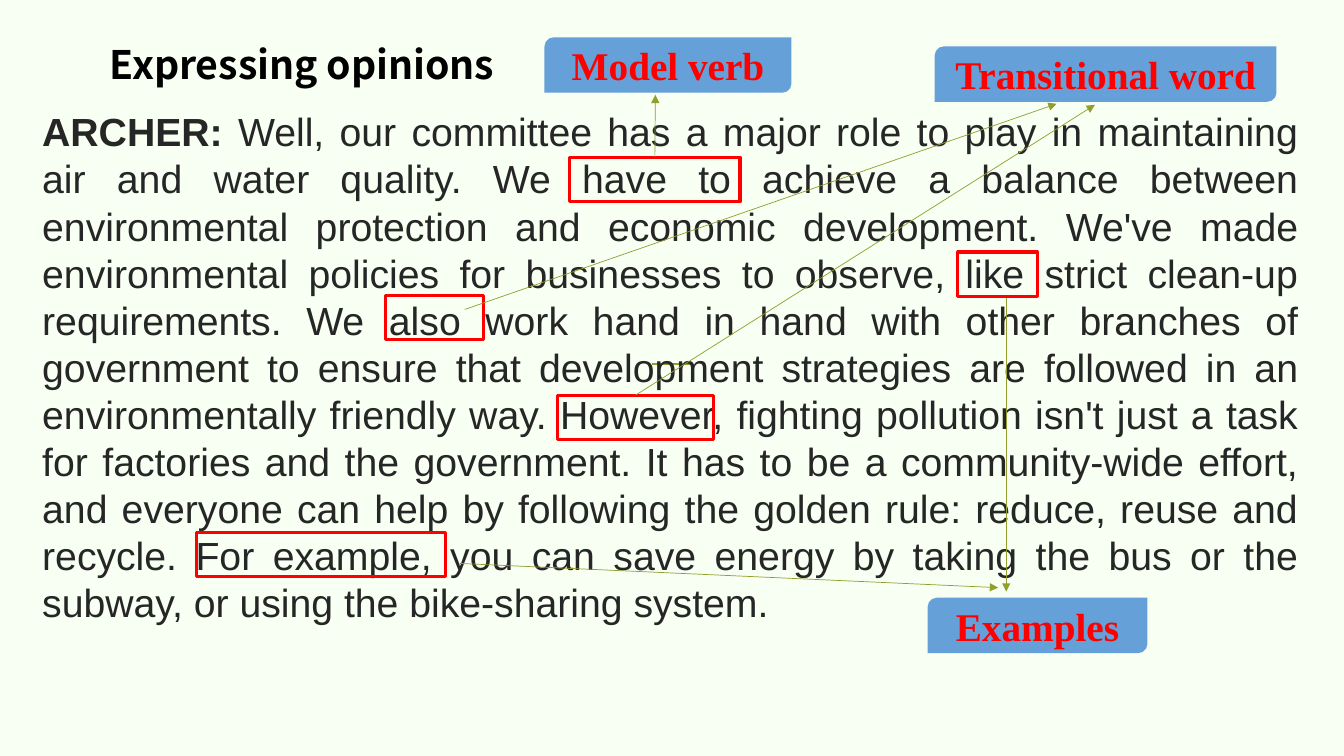
from lxml import etree
from pptx import Presentation
from pptx.dml.color import RGBColor
from pptx.enum.shapes import MSO_CONNECTOR, MSO_SHAPE
from pptx.enum.text import MSO_ANCHOR, PP_ALIGN
from pptx.oxml.ns import qn
from pptx.util import Inches, Pt

STRAIGHT = MSO_CONNECTOR.STRAIGHT
RECTANGLE = MSO_SHAPE.RECTANGLE
LABEL_SHAPE = MSO_SHAPE.ROUND_2_DIAG_RECTANGLE
TOP, MIDDLE = MSO_ANCHOR.TOP, MSO_ANCHOR.MIDDLE
LEFT, CENTER, JUSTIFY = PP_ALIGN.LEFT, PP_ALIGN.CENTER, PP_ALIGN.JUSTIFY
TOP_SITE = 0

BACKGROUND, BLACK, BODY = "F8FFF3", "000000", "262626"
RED, BLUE, OLIVE = "FF0000", "65A1D8", "929E2D"

SPEECH = (
    "Well, our committee has a major role to play in maintaining air and water quality. "
    "We have to achieve a balance between environmental protection and economic development. "
    "We've made environmental policies for businesses to observe, like strict clean-up "
    "requirements. We also work hand in hand with other branches of government to ensure that "
    "development strategies are followed in an environmentally friendly way. However, fighting "
    "pollution isn't just a task for factories and the government. It has to be a "
    "community-wide effort, and everyone can help by following the golden rule: reduce, reuse "
    "and recycle. For example, you can save energy by taking the bus or the subway, or using "
    "the bike-sharing system."
)


def color(value):
    return RGBColor.from_string(value)


def write(shape, runs, font="Arial", size=28, fill=BODY, align=LEFT, anchor=TOP, spacing=None):
    """Fill a shape with one paragraph made of (text, bold) runs."""
    frame = shape.text_frame
    frame.word_wrap = True
    frame.vertical_anchor = anchor
    paragraph = frame.paragraphs[0]
    paragraph.alignment = align
    if spacing:
        paragraph.line_spacing = spacing
    for text, bold in runs:
        run = paragraph.add_run()
        run.text = text
        run.font.name = font
        run.font.size = Pt(size)
        run.font.bold = bold
        run.font.color.rgb = color(fill)


class OpinionSlide:
    def __init__(self, presentation):
        self.slide = presentation.slides.add_slide(presentation.slide_layouts[6])
        self.shapes = self.slide.shapes
        background = self.slide.background.fill
        background.solid()
        background.fore_color.rgb = color(BACKGROUND)

    def text(self, box, runs, **style):
        write(self.shapes.add_textbox(*map(Inches, box)), runs, **style)

    def highlight(self, left, top, width):
        """Frame a phrase in the speech."""
        shape = self.shapes.add_shape(RECTANGLE, *map(Inches, (left, top, width, 0.44)))
        shape.shadow.inherit = False
        shape.fill.background()
        shape.line.color.rgb = color(RED)
        shape.line.width = Pt(2.25)
        return shape

    def label(self, text, left, top, width):
        shape = self.shapes.add_shape(LABEL_SHAPE, *map(Inches, (left, top, width, 0.55)))
        shape.shadow.inherit = False
        shape.fill.solid()
        shape.fill.fore_color.rgb = color(BLUE)
        shape.line.fill.background()
        write(shape, [(text, True)], font="Times New Roman", fill=RED, align=CENTER, anchor=MIDDLE)

    def line(self, start, end, width=0.5, arrow=True, source=None):
        connector = self.shapes.add_connector(STRAIGHT, *map(Inches, start + end))
        if source is not None:
            connector.begin_connect(source, TOP_SITE)
        connector.line.color.rgb = color(OLIVE)
        connector.line.width = Pt(width)
        if arrow:
            outline = connector.line._get_or_add_ln()
            etree.SubElement(outline, qn("a:tailEnd"), type="triangle")
        etree.SubElement(connector._element.spPr, qn("a:effectLst"))


def main():
    presentation = Presentation()
    presentation.slide_width = Inches(13.33)
    presentation.slide_height = Inches(7.5)
    page = OpinionSlide(presentation)

    page.line((6.47, 3.61), (6.85, 3.61), width=1.5, arrow=False)
    page.text((0.99, 0.24, 6.61, 0.79), [("Expressing opinions", True)],
              font="Noto Sans CJK SC", fill=BLACK, anchor=MIDDLE)
    page.text((0.32, 1.02, 12.65, 5.28), [("ARCHER: ", True), (SPEECH, False)],
              align=JUSTIFY, spacing=Pt(33.6))

    have_to = page.highlight(5.65, 1.56, 1.69)
    page.highlight(9.5, 2.5, 0.79)
    page.highlight(3.82, 2.93, 0.98)
    however = page.highlight(5.53, 3.92, 1.55)
    page.highlight(1.95, 5.28, 2.47)

    page.label("Examples", 9.2, 5.93, 2.18)
    page.line((9.98, 2.96), (9.98, 5.87))
    page.line((4.56, 5.59), (9.9, 5.83))

    page.label("Transitional word", 9.27, 0.46, 3.39)
    page.line((4.61, 3.07), (10.48, 1.03))
    page.line((6.31, 3.92), (10.86, 1.04), source=however)

    page.label("Model verb", 5.4, 0.37, 2.45)
    page.line((6.5, 1.56), (6.5, 0.94), source=have_to)

    presentation.save("out.pptx")


if __name__ == "__main__":
    main()
